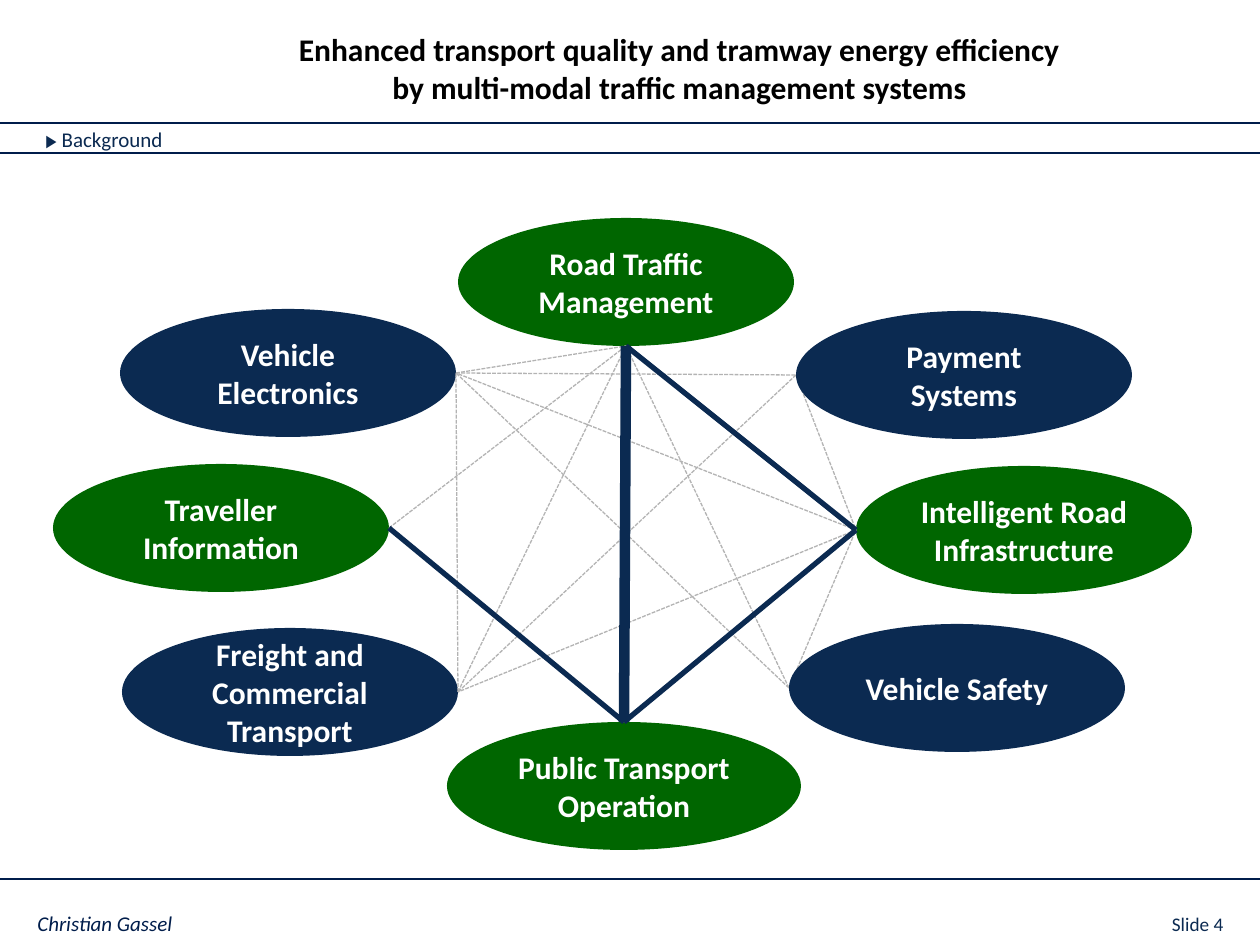
from dataclasses import dataclass
from typing import NamedTuple

from lxml import etree
from pptx import Presentation
from pptx import util as u
from pptx.dml.color import RGBColor
from pptx.enum import dml, shapes, text
from pptx.oxml.ns import qn

EMU_PER_PX = 914400 / 126
NAVY, RULE_NAVY, GREEN, GREY = "0B2A51", "001D4B", "006600", "B3B3B3"
WHITE, BLACK = "FFFFFF", "000000"


class Point(NamedTuple):
    x: int
    y: int


class Box(NamedTuple):
    left: int
    top: int
    width: int
    height: int


class Run(NamedTuple):
    text: str
    format: dict


@dataclass(frozen=True)
class Topic:
    label: str
    left: int
    top: int
    side: str
    fill: str
    width: int = 336
    height: int = 128

    @property
    def hub(self) -> Point:
        middle_x, middle_y = self.left + self.width // 2, self.top + self.height // 2
        return {
            "top": Point(middle_x, self.top),
            "bottom": Point(middle_x, self.top + self.height),
            "left": Point(self.left, middle_y),
            "right": Point(self.left + self.width, middle_y),
        }[self.side]


class Link(NamedTuple):
    start: str
    end: str
    weight: float = 3


TOPICS = {
    "road": Topic("Road Traffic Management", 458, 218, "bottom", GREEN),
    "traveller": Topic("Traveller Information", 53, 464, "right", GREEN),
    "electronics": Topic("Vehicle Electronics", 120, 309, "right", NAVY),
    "freight": Topic("Freight and Commercial Transport", 122, 628, "right", NAVY),
    "public": Topic("Public Transport Operation", 447, 722, "top", GREEN, 354),
    "infrastructure": Topic("Intelligent Road\nInfrastructure", 856, 466, "left", GREEN),
    "payment": Topic("Payment Systems", 796, 311, "left", NAVY),
    "safety": Topic("Vehicle Safety", 789, 624, "left", NAVY),
}
TOPICS_ABOVE_LINKS = ("payment", "safety")

WEAK_LINKS = [
    Link(start, end, 0.75)
    for start, ends in {
        "safety": ("infrastructure", "road", "electronics"),
        "public": ("traveller", "infrastructure"),
        "infrastructure": ("electronics", "freight", "road"),
        "electronics": ("payment", "road"),
        "payment": ("freight", "infrastructure"),
        "freight": ("electronics", "road"),
        "traveller": ("road",),
    }.items()
    for end in ends
]
STRONG_LINKS = [
    Link("public", "traveller"),
    Link("infrastructure", "public"),
    Link("public", "road", 6),
    Link("infrastructure", "road"),
]


def px(length: int) -> u.Emu:
    return u.Emu(round(length * EMU_PER_PX))


def color(value: str) -> RGBColor:
    return RGBColor.from_string(value)


def apply_format(target, values: dict) -> None:
    for name, value in values.items():
        setattr(target, name, value)


def add_run(paragraph, run: Run) -> None:
    new_run = paragraph.add_run()
    new_run.text = run.text
    values = dict(run.format)
    new_run.font.color.rgb = color(values.pop("color"))
    apply_format(new_run.font, {"name": "Calibri", **values})


def add_text(slide, box: Box, runs: list[Run], align=text.PP_ALIGN.LEFT,
             anchor=text.MSO_ANCHOR.TOP) -> None:
    frame = slide.shapes.add_textbox(*map(px, box)).text_frame
    apply_format(frame, {"word_wrap": True, "vertical_anchor": anchor})
    paragraph = frame.paragraphs[0]
    paragraph.alignment = align
    for run in runs:
        add_run(paragraph, run)


def add_line(slide, start: Point, end: Point, line_color: str, weight: float,
             dashed: bool = False) -> None:
    connector = slide.shapes.add_connector(
        shapes.MSO_CONNECTOR.STRAIGHT, *map(px, (*start, *end)))
    connector.line.color.rgb = color(line_color)
    connector.line.width = u.Pt(weight)
    if dashed:
        connector.line.dash_style = dml.MSO_LINE.SQUARE_DOT
    etree.SubElement(connector._element.spPr, qn("a:effectLst"))


def add_topic(slide, topic: Topic) -> None:
    ellipse = slide.shapes.add_shape(
        shapes.MSO_SHAPE.OVAL,
        *map(px, (topic.left, topic.top, topic.width, topic.height)))
    ellipse.shadow.inherit = False
    ellipse.fill.solid()
    ellipse.fill.fore_color.rgb = color(topic.fill)
    ellipse.line.fill.background()
    frame = ellipse.text_frame
    apply_format(frame, {"word_wrap": True, "vertical_anchor": text.MSO_ANCHOR.MIDDLE})
    for index, label in enumerate(topic.label.split("\n")):
        paragraph = frame.add_paragraph() if index else frame.paragraphs[0]
        paragraph.alignment = text.PP_ALIGN.CENTER
        add_run(paragraph, Run(label, {"size": u.Pt(18), "bold": True, "color": WHITE}))


def add_links(slide, links: list[Link], line_color: str, dashed: bool = False) -> None:
    for link in links:
        add_line(slide, TOPICS[link.start].hub, TOPICS[link.end].hub,
                 line_color, link.weight, dashed)


def add_frame(slide) -> None:
    add_text(slide, Box(1123, 906, 113, 35),
             [Run("Slide 4", {"size": u.Pt(11), "color": NAVY})],
             align=text.PP_ALIGN.RIGHT)
    add_text(slide, Box(272, 24, 815, 118),
             [Run("Enhanced transport quality and tramway energy efficiency "
                  "by multi-modal traffic management systems",
                  {"size": u.Pt(18), "bold": True, "color": BLACK})],
             align=text.PP_ALIGN.CENTER)
    add_text(slide, Box(25, 879, 1111, 63),
             [Run("Christian Gassel", {"size": u.Pt(12), "italic": True, "color": RULE_NAVY})],
             anchor=text.MSO_ANCHOR.BOTTOM)
    for y in (879, 123, 153):
        add_line(slide, Point(0, y), Point(1260, y), RULE_NAVY, 1)
    add_text(slide, Box(33, 120, 764, 38),
             [Run("▶", {"size": u.Pt(10), "color": NAVY}),
              Run(" Background", {"size": u.Pt(12), "color": NAVY})],
             anchor=text.MSO_ANCHOR.MIDDLE)


def main() -> None:
    presentation = Presentation()
    apply_format(presentation, {"slide_width": px(1260), "slide_height": px(945)})
    slide = presentation.slides.add_slide(presentation.slide_layouts[6])
    add_frame(slide)
    for name, topic in TOPICS.items():
        if name not in TOPICS_ABOVE_LINKS:
            add_topic(slide, topic)
    add_links(slide, WEAK_LINKS, GREY, dashed=True)
    for name in TOPICS_ABOVE_LINKS:
        add_topic(slide, TOPICS[name])
    add_links(slide, STRONG_LINKS, NAVY)
    presentation.save("out.pptx")


if __name__ == "__main__":
    main()
